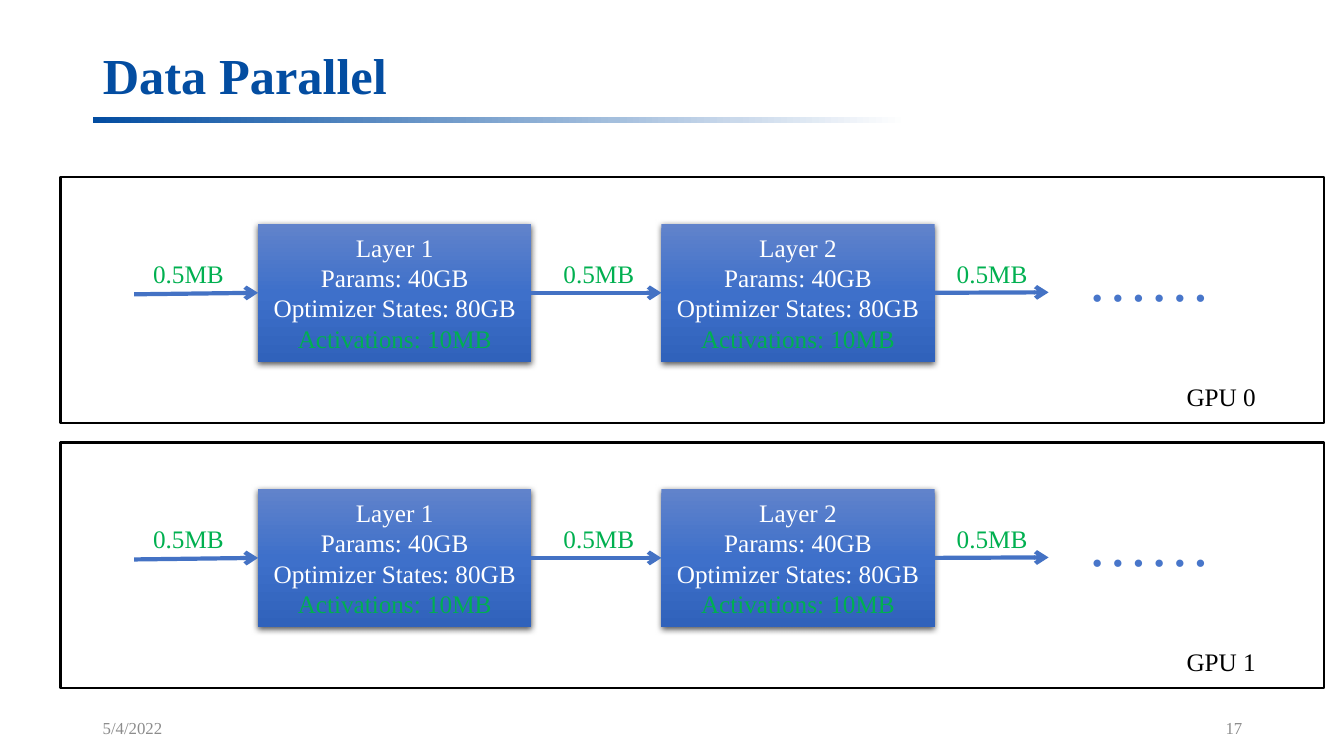
from dataclasses import dataclass

from lxml.etree import SubElement
from pptx import Presentation
from pptx.dml.color import RGBColor
from pptx.enum.shapes import MSO_CONNECTOR, MSO_SHAPE
from pptx.enum.text import MSO_ANCHOR, MSO_AUTO_SIZE, PP_ALIGN
from pptx.oxml.ns import qn
from pptx.util import Pt

SCALE = 9144  # EMU in one px, 100 px to the inch
FONT = "Times New Roman"
COLORS = {
    "title": "034DA1",
    "footer": "8C8C8C",
    "arrow": "4472C4",
    "dots": "4876CA",
    "activation": "00B050",
    "white": "FFFFFF",
    "black": "000000",
}
BOX_STOPS = [(0, "6183CB"), (50, "3E70CA"), (100, "3062BB")]
RULE_STOPS = [(0, "034DA1"), (64, "A4BFDD"), (71, "B6CBE4"), (79, "CAD9EB"), (100, "FFFFFF")]


@dataclass
class Layer:
    name: str
    left: int


@dataclass
class Gpu:
    name: str
    top: int


LAYERS = [Layer("Layer 1", 256), Layer("Layer 2", 656)]
GPUS = [Gpu("GPU 0", 176), Gpu("GPU 1", 439)]
SIZE_LABEL_LEFTS = [142, 549, 939]
BOX_WIDTH, BOX_HEIGHT = 271, 137


def px(*lengths: int) -> list[int]:
    return [length * SCALE for length in lengths]


def rgb(name: str) -> RGBColor:
    return RGBColor.from_string(COLORS[name])


def write(frame, text: str, *, size: int = 18, color: str = "black", bold: bool = False,
          align=PP_ALIGN.LEFT, anchor=MSO_ANCHOR.TOP, wrap: bool = True,
          last_color: str = "") -> None:
    """Write one paragraph per line; last_color recolours the final one."""
    frame.word_wrap = wrap
    frame.auto_size = MSO_AUTO_SIZE.NONE if wrap else MSO_AUTO_SIZE.SHAPE_TO_FIT_TEXT
    frame.vertical_anchor = anchor
    lines = text.split("\n")
    for index, line in enumerate(lines):
        para = frame.add_paragraph() if index else frame.paragraphs[0]
        para.alignment = align
        span = para.add_run()
        span.text = line
        span.font.name = FONT
        span.font.size = Pt(size)
        span.font.bold = bold
        is_last = index == len(lines) - 1
        span.font.color.rgb = rgb(last_color if last_color and is_last else color)


def add_text(page, left: int, top: int, width: int, height: int, text: str, **style) -> None:
    box = page.shapes.add_textbox(*px(left, top, width, height))
    write(box.text_frame, text, **style)


def add_rectangle(page, left: int, top: int, width: int, height: int):
    box = page.shapes.add_shape(MSO_SHAPE.RECTANGLE, *px(left, top, width, height))
    box.shadow.inherit = False
    box.fill.background()
    box.line.fill.background()
    return box


def set_gradient(box, stops: list[tuple[int, str]], angle: int) -> None:
    properties = box.element.spPr
    gradient = SubElement(properties, qn("a:gradFill"), rotWithShape="1")
    stop_list = SubElement(gradient, qn("a:gsLst"))
    for position, color in stops:
        stop = SubElement(stop_list, qn("a:gs"), pos=str(position * 1000))
        SubElement(stop, qn("a:srgbClr"), val=color)
    SubElement(gradient, qn("a:lin"), ang=str(angle * 60000), scaled="0")
    properties.replace(properties.find(qn("a:noFill")), gradient)


def set_shadow(box) -> None:
    effects = box.element.spPr.find(qn("a:effectLst"))
    shadow = SubElement(effects, qn("a:outerShdw"), blurRad=str(Pt(4.5)), dist=str(Pt(1.5)),
                        dir="5400000", algn="ctr", rotWithShape="0")
    color = SubElement(shadow, qn("a:srgbClr"), val=COLORS["black"])
    SubElement(color, qn("a:alpha"), val="63000")


def add_layer(page, layer: Layer, top: int):
    box = add_rectangle(page, layer.left, top, BOX_WIDTH, BOX_HEIGHT)
    set_gradient(box, BOX_STOPS, 90)
    set_shadow(box)
    write(box.text_frame,
          f"{layer.name}\nParams: 40GB\nOptimizer States: 80GB\nActivations: 10MB",
          color="white", last_color="activation", align=PP_ALIGN.CENTER,
          anchor=MSO_ANCHOR.MIDDLE)
    return box


def add_arrow(page, start: tuple[int, int], end: tuple[int, int], source=None, target=None) -> None:
    arrow = page.shapes.add_connector(MSO_CONNECTOR.STRAIGHT, *px(*start, *end))
    if source is not None:
        arrow.begin_connect(source, 3)
    if target is not None:
        arrow.end_connect(target, 1)
    arrow.line.color.rgb = rgb("arrow")
    arrow.line.width = Pt(3)
    SubElement(arrow.line._get_or_add_ln(), qn("a:tailEnd"), type="arrow")
    SubElement(arrow.element.spPr, qn("a:effectLst"))


def add_gpu(page, gpu: Gpu) -> None:
    # Layers and the arrows between them
    middle = gpu.top + 114
    first, second = [add_layer(page, layer, gpu.top + 46) for layer in LAYERS]
    first_left, second_left = [layer.left for layer in LAYERS]
    add_arrow(page, (133, middle + 2), (first_left, middle), target=first)
    add_arrow(page, (first_left + BOX_WIDTH, middle), (second_left, middle), first, second)
    add_arrow(page, (second_left + BOX_WIDTH, middle), (1040, middle), source=second)

    # Transfer sizes and continuation dots
    for left in SIZE_LABEL_LEFTS:
        add_text(page, left, gpu.top + 75, 91, 40, "0.5MB", color="activation", wrap=False)
    add_text(page, 1069, gpu.top + 57, 144, 84, "……", size=44, color="dots", wrap=False)

    # Frame and name
    frame = add_rectangle(page, 60, gpu.top, 1253, 244)
    frame.line.color.rgb = rgb("black")
    frame.line.width = Pt(1.5)
    add_text(page, 1167, gpu.top + 197, 90, 40, gpu.name, wrap=False)


def main() -> None:
    deck = Presentation()
    deck.slide_width, deck.slide_height = px(1333, 750)
    page = deck.slides.add_slide(deck.slide_layouts[5])

    # Title and its rule
    title = page.shapes.title
    title.left, title.top, title.width, title.height = px(92, 40, 1150, 75)
    write(title.text_frame, "Data Parallel", size=36, color="title", bold=True,
          anchor=MSO_ANCHOR.MIDDLE)
    title.text_frame.paragraphs[0].line_spacing = 0.9
    set_gradient(add_rectangle(page, 92, 116, 808, 6), RULE_STOPS, 0)

    # Footer
    for left, text, align in [(92, "5/4/2022", PP_ALIGN.LEFT), (942, "17", PP_ALIGN.RIGHT)]:
        add_text(page, left, 702, 300, 40, text, size=12, color="footer", align=align,
                 anchor=MSO_ANCHOR.MIDDLE)

    for gpu in GPUS:
        add_gpu(page, gpu)
    deck.save("out.pptx")


if __name__ == "__main__":
    main()
